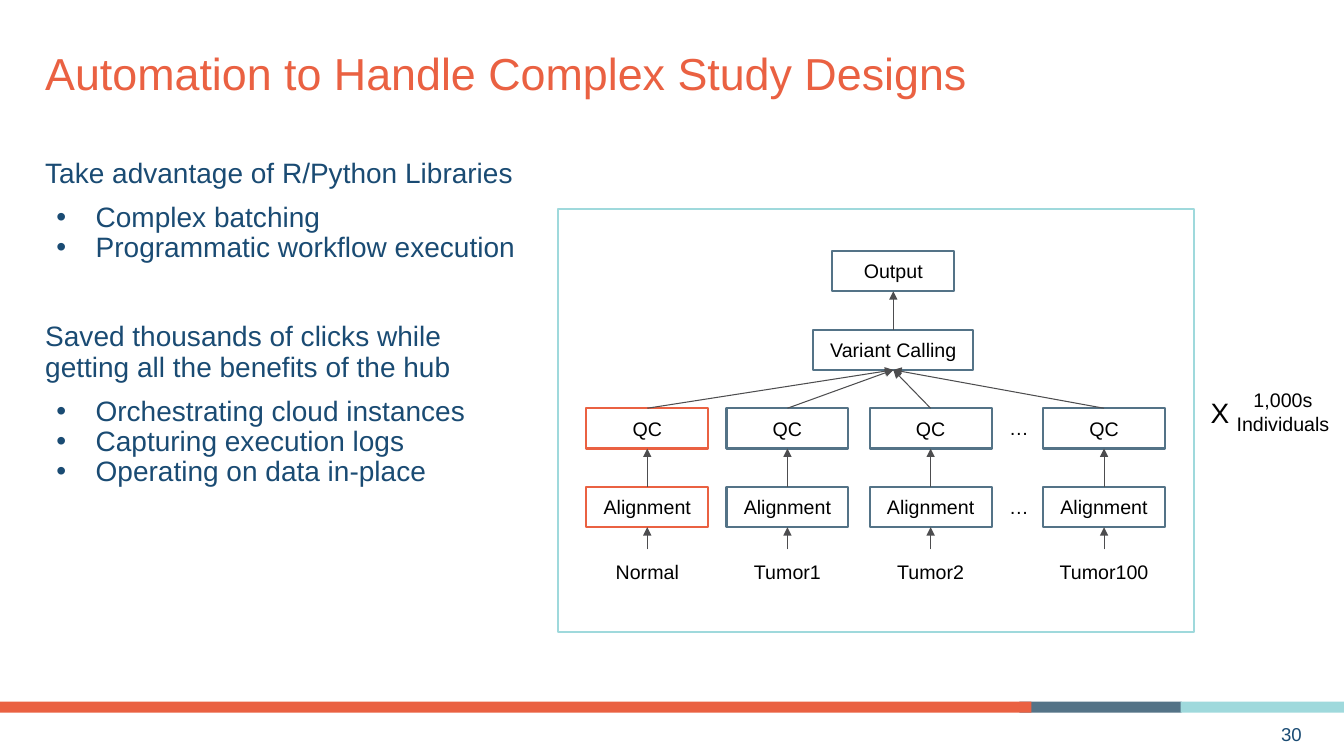
from dataclasses import dataclass

from lxml import etree
from pptx import Presentation
from pptx.dml.color import RGBColor
from pptx.enum.shapes import MSO_CONNECTOR, MSO_SHAPE
from pptx.enum.text import MSO_ANCHOR, PP_ALIGN
from pptx.oxml.ns import qn
from pptx.util import Inches, Pt

RECTANGLE = MSO_SHAPE.RECTANGLE
STRAIGHT = MSO_CONNECTOR.STRAIGHT
TOP, MIDDLE = MSO_ANCHOR.TOP, MSO_ANCHOR.MIDDLE
LEFT, CENTER, RIGHT = PP_ALIGN.LEFT, PP_ALIGN.CENTER, PP_ALIGN.RIGHT


@dataclass(frozen=True)
class Theme:
    """Colours, font and type sizes of the slide."""
    font: str = "Arial"
    orange: str = "EA6142"
    slate: str = "547387"
    aqua: str = "9FD9DC"
    navy: str = "1A4B73"
    arrow: str = "4D4D4F"
    black: str = "000000"
    white: str = "FFFFFF"
    title_size: float = 32
    body_size: float = 20
    label_size: float = 14
    number_size: float = 13.3
    outline: float = 1.5
    arrow_width: float = 0.75


THEME = Theme()

BODY = [
    ("Take advantage of R/Python Libraries", False, 0),
    ("Complex batching", True, 10),
    ("Programmatic workflow execution", True, 0),
    ("Saved thousands of clicks while getting all the benefits of the hub", False, 42),
    ("Orchestrating cloud instances", True, 10),
    ("Capturing execution logs", True, 0),
    ("Operating on data in-place", True, 0),
]
SAMPLES = [
    ("Normal", 0.89, THEME.orange),
    ("Tumor1", 2.28, THEME.slate),
    ("Tumor2", 3.7, THEME.slate),
    ("Tumor100", 5.42, THEME.slate),
]


def color(code):
    """Turn a hex code into a colour."""
    return RGBColor.from_string(code)


def set_attributes(target, **values):
    """Set every given value on the target."""
    for name, value in values.items():
        setattr(target, name, value)


def style_font(paragraph, size, code):
    """Apply the theme font to a paragraph and its runs."""
    for font in [paragraph.font] + [run.font for run in paragraph.runs]:
        set_attributes(font, name=THEME.font, size=Pt(size))
        font.color.rgb = color(code)


def add_text(slide, box, lines, size, code, align=LEFT, anchor=TOP, inset=0.05, wrap=True):
    """Add a text box holding one paragraph per line."""
    frame = slide.shapes.add_textbox(*map(Inches, box)).text_frame
    set_attributes(frame, word_wrap=wrap, vertical_anchor=anchor,
                   margin_left=Inches(0.1), margin_right=Inches(0.1),
                   margin_top=Inches(inset), margin_bottom=Inches(inset))
    frame.text = "\n".join(lines)
    for paragraph in frame.paragraphs:
        paragraph.alignment = align
        style_font(paragraph, size, code)


def add_rectangle(slide, box, fill=None, line=None):
    """Add a flat rectangle with an optional fill and outline."""
    shape = slide.shapes.add_shape(RECTANGLE, *map(Inches, box))
    shape.shadow.inherit = False
    if fill:
        shape.fill.solid()
        shape.fill.fore_color.rgb = color(fill)
    else:
        shape.fill.background()
    if line:
        shape.line.color.rgb = color(line)
        shape.line.width = Pt(THEME.outline)
    else:
        shape.line.fill.background()
    return shape


def add_step(slide, center, top, text, line, width=1.21, height=0.4):
    """Add a labelled workflow step centred on a column."""
    shape = add_rectangle(slide, (center - width / 2, top, width, height), THEME.white, line)
    frame = shape.text_frame
    set_attributes(frame, vertical_anchor=MIDDLE, word_wrap=True, text=text)
    paragraph = frame.paragraphs[0]
    paragraph.alignment = CENTER
    style_font(paragraph, THEME.label_size, THEME.black)


def add_arrow(slide, start, end):
    """Add a thin arrow from start to end."""
    connector = slide.shapes.add_connector(STRAIGHT, *map(Inches, start + end))
    connector.line.color.rgb = color(THEME.arrow)
    connector.line.width = Pt(THEME.arrow_width)
    properties = connector.element.spPr
    etree.SubElement(properties.find(qn("a:ln")), qn("a:tailEnd"), type="triangle")
    etree.SubElement(properties, qn("a:effectLst"))


def add_bullet(paragraph):
    """Give a paragraph a coloured bullet and hanging indent."""
    properties = paragraph._p.get_or_add_pPr()
    properties.set("marL", str(Inches(0.5)))
    properties.set("indent", str(Inches(-0.39)))
    bullet_color = etree.SubElement(properties, qn("a:buClr"))
    etree.SubElement(bullet_color, qn("a:srgbClr"), val=THEME.navy)
    etree.SubElement(properties, qn("a:buFont"), typeface=THEME.font)
    etree.SubElement(properties, qn("a:buChar"), char="•")


def add_body(slide, box):
    """Add the statements and their bullets."""
    frame = slide.shapes.add_textbox(*map(Inches, box)).text_frame
    frame.word_wrap = True
    frame.text = "\n".join(text for text, _, _ in BODY)
    for paragraph, (_, bulleted, space) in zip(frame.paragraphs, BODY):
        if bulleted:
            add_bullet(paragraph)
        set_attributes(paragraph, line_spacing=0.9, space_before=Pt(space))
        style_font(paragraph, THEME.body_size, THEME.navy)


def add_workflow(slide, box):
    """Add the framed diagram from samples up to the output."""
    left, top, width, height = box
    add_rectangle(slide, box, line=THEME.aqua)
    step_height = 0.4
    output, calling, quality, alignment = [top + 0.42 + 0.78 * row for row in range(4)]
    root = left + 3.33
    label_top = top + 3.38
    add_step(slide, root, output, "Output", THEME.slate)
    add_step(slide, root, calling, "Variant Calling", THEME.slate, 1.59)
    add_arrow(slide, (root, calling), (root, output + step_height))
    for name, offset, line in SAMPLES:
        center = left + offset
        add_step(slide, center, quality, "QC", line)
        add_step(slide, center, alignment, "Alignment", line)
        add_text(slide, (center - 0.56, label_top, 1.12, 0.44), [name], THEME.label_size,
                 THEME.black, CENTER, inset=0.1, wrap=False)
        add_arrow(slide, (center, label_top), (center, alignment + step_height))
        add_arrow(slide, (center, alignment), (center, quality + step_height))
        add_arrow(slide, (center, quality), (root, calling + step_height))
    for row in (quality, alignment):
        add_text(slide, (left + 4.38, row - 0.02, 0.38, 0.44), ["…"], THEME.label_size,
                 THEME.black, inset=0.1, wrap=False)


def add_multiplier(slide, box):
    """Add the multiplication sign and the number of individuals."""
    left, top, width, height = box
    add_text(slide, (left, top + 0.07, 0.41, 0.54), ["X"], THEME.body_size,
             THEME.black, inset=0.1, wrap=False)
    add_text(slide, (left + 0.24, top, width - 0.24, height), ["1,000s", "Individuals"],
             THEME.label_size, THEME.black, CENTER, inset=0.1, wrap=False)


def add_footer(slide, box):
    """Add the coloured band and the slide number."""
    left, top, width, height = box
    bands = [(10.11, 1.61, THEME.slate), (11.71, 1.62, THEME.aqua), (0, 10.23, THEME.orange)]
    for offset, band_width, fill in bands:
        add_rectangle(slide, (left + offset, top, band_width, 0.11), fill)
    add_text(slide, (left + width - 3.32, top + 0.12, 3, height - 0.12), ["30"],
             THEME.number_size, THEME.navy, RIGHT, MIDDLE)


def main():
    """Build and save the slide."""
    presentation = Presentation()
    set_attributes(presentation, slide_width=Inches(13.33), slide_height=Inches(7.5))
    slide = presentation.slides.add_slide(presentation.slide_layouts[6])
    add_footer(slide, (0, 6.96, 13.33, 0.52))
    add_text(slide, (0.35, 0.4, 12.65, 1.04), ["Automation to Handle Complex Study Designs"],
             THEME.title_size, THEME.orange)
    add_body(slide, (0.35, 1.53, 5.01, 5.27))
    add_workflow(slide, (5.53, 2.07, 6.31, 4.2))
    add_multiplier(slide, (11.91, 3.75, 1.39, 0.67))
    presentation.save("out.pptx")


if __name__ == "__main__":
    main()
